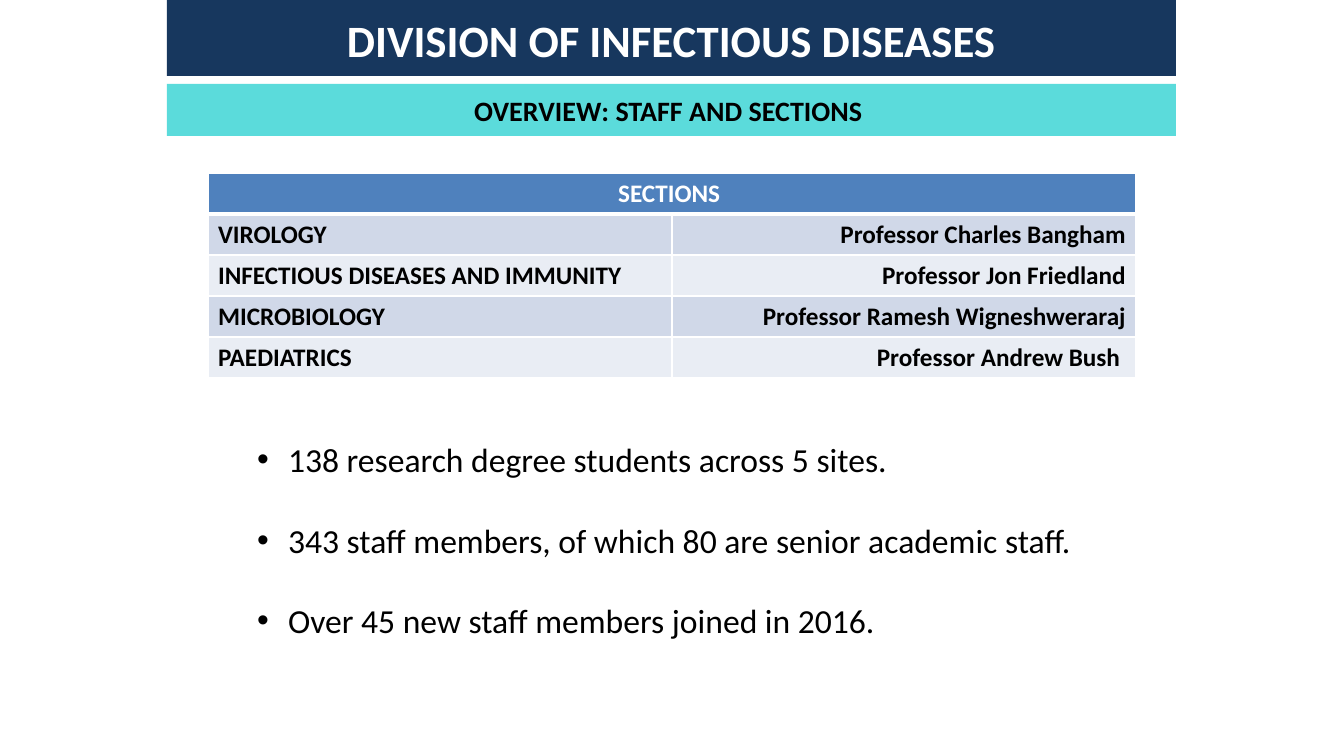
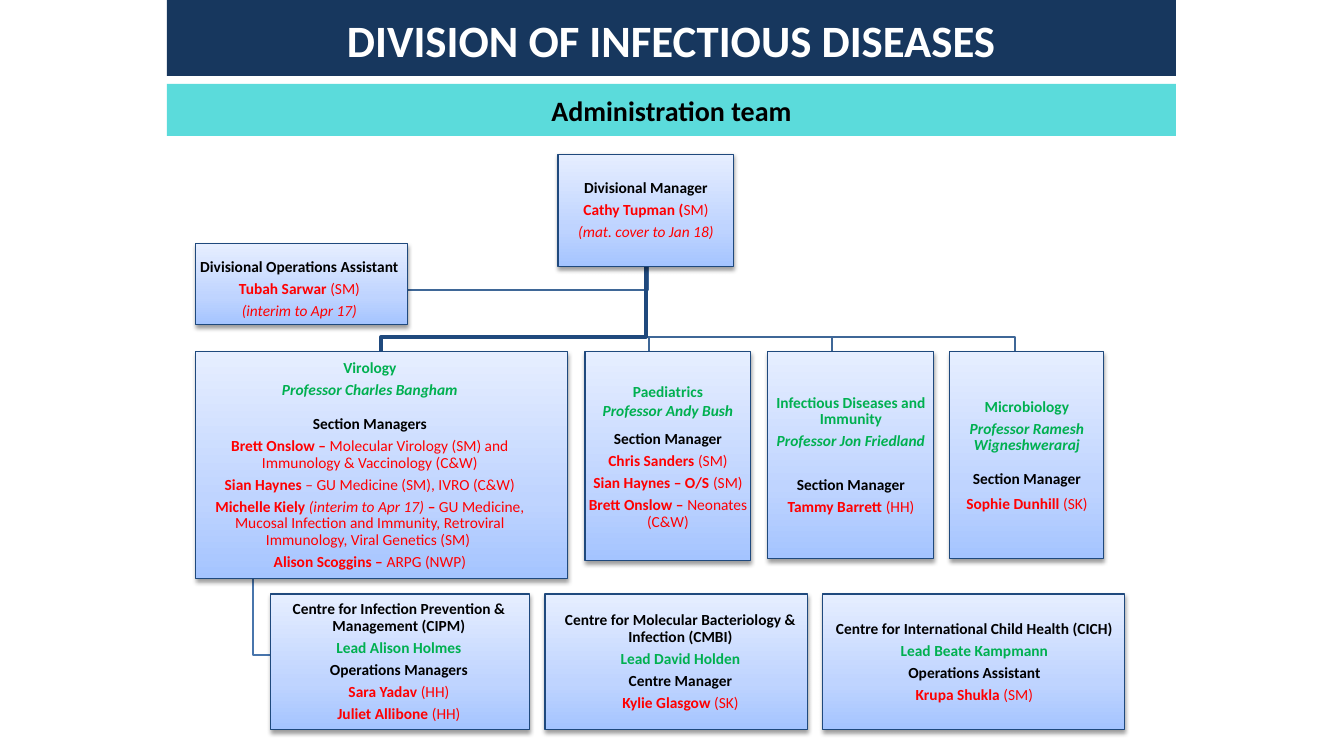
import dataclasses
import itertools

import pptx
import pptx.dml.color
import pptx.enum.shapes
import pptx.enum.text
import pptx.oxml
import pptx.oxml.ns
import pptx.util

EMU_PER_PX = 914400 / 100.8
DECK_SIZE = (1344, 756)
ALIGN = pptx.enum.text.PP_ALIGN
ANCHOR = pptx.enum.text.MSO_ANCHOR
RECTANGLE = pptx.enum.shapes.MSO_SHAPE.RECTANGLE
NAMESPACE = pptx.oxml.ns.nsdecls("a")


@dataclasses.dataclass(frozen=True)
class Theme:
    font: str = "Calibri"
    white: str = "FFFFFF"
    black: str = "000000"
    red: str = "FF0000"
    green: str = "00B050"
    navy: str = "17375E"
    aqua: str = "5BDBDB"
    table_head: str = "4F81BD"
    table_rows: tuple = ("D0D8E8", "E9EDF4")
    outline: str = "1F497D"
    branch: str = "3F6797"
    sub_branch: str = "4875AC"
    card_stops: tuple = ((0, "A4C4FF"), (35, "BFD4FF"), (100, "E6EEFF"))
    title_size: int = 32
    subtitle_size: int = 20
    table_size: int = 18
    list_size: int = 24
    card_size: int = 11


THEME = Theme()


@dataclasses.dataclass(frozen=True)
class Ink:
    color: str
    bold: bool = True
    italic: bool = False


ROLE = Ink(THEME.black)
LEAD = Ink(THEME.green)
PROFESSOR = Ink(THEME.green, italic=True)
PERSON = Ink(THEME.red)
DETAIL = Ink(THEME.red, bold=False)
COVER = Ink(THEME.red, bold=False, italic=True)


@dataclasses.dataclass(frozen=True)
class Line:
    """One paragraph of a card: (text, ink) runs and its spacing in points."""
    runs: tuple
    before: float = 0
    after: float = 3.85
    spacing: float = 0.9


@dataclasses.dataclass(frozen=True)
class Card:
    box: tuple
    lines: tuple
    inset: tuple = (1, 1, 1, 1)


def line(text, ink, **spacing):
    return Line(((text, ink),), **spacing)


def person(name, detail, **spacing):
    return Line(((name, PERSON), (detail, DETAIL)), **spacing)


SECTIONS = (
    ("VIROLOGY", "Professor Charles Bangham"),
    ("INFECTIOUS DISEASES AND IMMUNITY", "Professor Jon Friedland"),
    ("MICROBIOLOGY", "Professor Ramesh Wigneshweraraj"),
    ("PAEDIATRICS", "Professor Andrew Bush "),
)
FACTS = (
    "138 research degree students across 5 sites.",
    "343 staff members, of which 80 are senior academic staff.",
    "Over 45 new staff members joined in 2016.",
)

SECTION_TOP, CENTRE_TOP, CENTRE_HEIGHT = 198, 440, 136
CARDS = (
    Card((362, 0, 176, 113), (
        line("Divisional Manager", ROLE),
        person("Cathy Tupman (", "SM)"),
        line("(mat. cover to Jan 18)", COVER))),
    Card((0, 90, 212, 81), (
        line("Divisional Operations Assistant", ROLE),
        person("Tubah Sarwar ", "(SM)"),
        line("(interim to Apr 17)", COVER)), (1, 11, 6, 1)),
    Card((0, SECTION_TOP, 372, 227), (
        line("Virology", LEAD),
        line("Professor Charles Bangham", PROFESSOR),
        line("Section Managers", ROLE, before=8.6),
        person("Brett Onslow – ",
               "Molecular Virology (SM) and Immunology & Vaccinology (C&W)"),
        person("Sian Haynes ", "– GU Medicine (SM), IVRO (C&W)"),
        Line((("Michelle Kiely ", PERSON),
              ("(interim to Apr 17) ", COVER),
              ("– ", PERSON),
              ("GU Medicine, Mucosal Infection and Immunity, Retroviral "
               "Immunology, Viral Genetics (SM) ", DETAIL))),
        person("Alison Scoggins – ", "ARPG (NWP)")), (1, 1, 25, 1)),
    Card((389, SECTION_TOP, 166, 209), (
        line("Paediatrics", LEAD, after=0, spacing=1.0),
        line("Professor Andy Bush", PROFESSOR, after=0, spacing=1.0),
        line("Section Manager", ROLE, before=8.6),
        person("Chris Sanders ", "(SM)"),
        person("Sian Haynes – O/S ", "(SM)"),
        person("Brett Onslow – ", "Neonates (C&W)"))),
    Card((572, SECTION_TOP, 166, 207), (
        line("Infectious Diseases and Immunity", LEAD),
        line("Professor Jon Friedland", PROFESSOR),
        line("Section Manager", ROLE, before=15.7),
        person("Tammy Barrett ", "(HH)"))),
    Card((754, SECTION_TOP, 154, 207), (
        line("Microbiology", LEAD),
        line("Professor Ramesh Wigneshweraraj", PROFESSOR),
        line("Section Manager", ROLE, before=8.6),
        person("Sophie Dunhill ", "(SK)", after=0, spacing=1.0))),
    Card((75, CENTRE_TOP, 259, CENTRE_HEIGHT), (
        line("Centre for Infection Prevention & Management (CIPM)", ROLE),
        line("Lead Alison Holmes", LEAD),
        line("Operations Managers", ROLE),
        person("Sara Yadav ", "(HH)"),
        person("Juliet Allibone ", "(HH)")), (0, 1, 3, 1)),
    Card((349, CENTRE_TOP, 263, CENTRE_HEIGHT), (
        line("Centre for Molecular Bacteriology & Infection (CMBI)", ROLE),
        line("Lead David Holden", LEAD),
        line("Centre Manager", ROLE),
        person("Kylie Glasgow ", "(SK)")), (9, 1, 1, 1)),
    Card((627, CENTRE_TOP, 302, CENTRE_HEIGHT), (
        line("Centre for International Child Health (CICH)", ROLE),
        line("Lead Beate Kampmann", LEAD),
        line("Operations Assistant", ROLE),
        person("Krupa Shukla ", "(SM)")), (2, 1, 1, 1)),
)
TRUNK_X, TRUNK_TOP, BUS = 450, 94, 183


def branch(x):
    """Points from the manager down the trunk and along to a section."""
    return ((TRUNK_X, TRUNK_TOP), (TRUNK_X, BUS), (x, BUS), (x, SECTION_TOP))


ROUTES = (
    (((452, 108), (452, 136), (156, 136)), THEME.branch, 2),
    (branch(819), THEME.branch, 2),
    (branch(636), THEME.branch, 2),
    (branch(453), THEME.branch, 2),
    (((57, 409), (57, 501), (75, 501)), THEME.sub_branch, 2),
    (branch(185), THEME.outline, 2.25),
)


def px(*lengths):
    return [pptx.util.Emu(round(length * EMU_PER_PX)) for length in lengths]


def rgb(color):
    return pptx.dml.color.RGBColor.from_string(color)


def place(shape, box):
    shape.left, shape.top, shape.width, shape.height = px(*box)


def add_span(para, text, size, ink):
    span = para.add_run()
    span.text = text
    span.font.name = THEME.font
    span.font.size = pptx.util.Pt(size)
    span.font.bold = ink.bold
    span.font.italic = ink.italic
    span.font.color.rgb = rgb(ink.color)


def space(para, before, after, spacing):
    para.space_before = pptx.util.Pt(before)
    para.space_after = pptx.util.Pt(after)
    para.line_spacing = spacing


def fill_band(shape, text, fill, size, color):
    shape.fill.solid()
    shape.fill.fore_color.rgb = rgb(fill)
    frame = shape.text_frame
    frame.word_wrap = True
    frame.auto_size = pptx.enum.text.MSO_AUTO_SIZE.NONE
    frame.vertical_anchor = ANCHOR.TOP
    para = frame.paragraphs[0]
    para.alignment = ALIGN.CENTER
    space(para, 0, 10, 1.15)
    add_span(para, text, size, Ink(color))


def add_heading(page, box, subtitle):
    """Title band with the subtitle band below it."""
    left, top, width, _ = box
    title = page.shapes.title
    place(title, (left, top, width, 76))
    fill_band(title, "DIVISION OF INFECTIOUS DISEASES", THEME.navy,
              THEME.title_size, THEME.white)
    band = page.shapes.add_shape(RECTANGLE, *px(left, top + 84, width, 52))
    band.shadow.inherit = False
    band.line.fill.background()
    fill_band(band, subtitle, THEME.aqua, THEME.subtitle_size, THEME.black)


def set_cell(cell, text, fill, ink, align, borders):
    properties = cell._tc.get_or_add_tcPr()
    for side, width in borders:
        properties.append(pptx.oxml.parse_xml(
            f'<a:ln{side} {NAMESPACE} w="{width * 12700}"><a:solidFill>'
            f'<a:srgbClr val="{THEME.white}"/></a:solidFill></a:ln{side}>'))
    cell.fill.solid()
    cell.fill.fore_color.rgb = rgb(fill)
    cell.vertical_anchor = ANCHOR.MIDDLE
    para = cell.text_frame.paragraphs[0]
    para.alignment = align
    if text:
        add_span(para, text, THEME.table_size, ink)


def add_sections_table(page, box):
    table = page.shapes.add_table(len(SECTIONS) + 1, 2, *px(*box)).table
    for column, text in enumerate(("SECTIONS ", "")):
        set_cell(table.cell(0, column), text, THEME.table_head,
                 Ink(THEME.white), ALIGN.CENTER, (("T", 1), ("B", 3)))
    table.cell(0, 0).merge(table.cell(0, 1))
    columns = (("R", ALIGN.LEFT), ("L", ALIGN.RIGHT))
    fills = itertools.cycle(THEME.table_rows)
    for row, (texts, fill) in enumerate(zip(SECTIONS, fills), 1):
        for column, (inner_side, align) in enumerate(columns):
            borders = ((inner_side, 1), ("T", 3 if row == 1 else 1), ("B", 1))
            set_cell(table.cell(row, column), texts[column], fill, ROLE,
                     align, borders)


def add_facts(page, box):
    body = page.placeholders[1]
    place(body, box)
    frame = body.text_frame
    frame.auto_size = pptx.enum.text.MSO_AUTO_SIZE.NONE
    indent, = px(31)
    for index, fact in enumerate(FACTS):
        para = frame.add_paragraph() if index else frame.paragraphs[0]
        space(para, 28.6 if index else 0, 0, 1.0)
        properties = para._p.get_or_add_pPr()
        properties.set("marL", str(indent))
        properties.set("indent", str(-indent))
        add_span(para, fact, THEME.list_size, Ink(THEME.black, bold=False))


def add_route(page, origin, points, color, width):
    """Open right-angled outline through points."""
    start, *corners = [px(origin[0] + x, origin[1] + y) for x, y in points]
    builder = page.shapes.build_freeform(*start)
    builder.add_line_segments(corners, close=False)
    route = builder.convert_to_shape()
    route.shadow.inherit = False
    route.fill.background()
    route.line.color.rgb = rgb(color)
    route.line.width = pptx.util.Pt(width)


def style_card(shape):
    """Outline, upward gradient and soft shadow."""
    shape.line.color.rgb = rgb(THEME.outline)
    shape.line.width = pptx.util.Pt(0.75)
    stops = "".join(f'<a:gs pos="{position * 1000}"><a:srgbClr val="{color}"/></a:gs>'
                    for position, color in THEME.card_stops)
    properties = shape._element.spPr
    properties.find(pptx.oxml.ns.qn("a:prstGeom")).addnext(pptx.oxml.parse_xml(
        f'<a:gradFill {NAMESPACE} rotWithShape="1"><a:gsLst>{stops}</a:gsLst>'
        '<a:lin ang="16200000" scaled="0"/></a:gradFill>'))
    properties.append(pptx.oxml.parse_xml(
        f'<a:effectLst {NAMESPACE}><a:outerShdw blurRad="40000" dist="20000" '
        f'dir="5400000" rotWithShape="0"><a:srgbClr val="{THEME.black}">'
        '<a:alpha val="38000"/></a:srgbClr></a:outerShdw></a:effectLst>'))


def add_card(page, origin, card):
    x, y, width, height = card.box
    shape = page.shapes.add_shape(
        RECTANGLE, *px(origin[0] + x, origin[1] + y, width, height))
    style_card(shape)
    frame = shape.text_frame
    frame.word_wrap = True
    frame.vertical_anchor = ANCHOR.MIDDLE
    (frame.margin_left, frame.margin_top,
     frame.margin_right, frame.margin_bottom) = px(*card.inset)
    for index, entry in enumerate(card.lines):
        para = frame.add_paragraph() if index else frame.paragraphs[0]
        para.alignment = ALIGN.CENTER
        space(para, entry.before, entry.after, entry.spacing)
        for text, ink in entry.runs:
            add_span(para, text, THEME.card_size, ink)


def add_team_chart(page, origin):
    for route in ROUTES:
        add_route(page, origin, *route)
    for card in CARDS:
        add_card(page, origin, card)


def main():
    deck = pptx.Presentation()
    deck.slide_width, deck.slide_height = px(*DECK_SIZE)
    heading_box = (167, 0, 1009, 136)
    overview = deck.slides.add_slide(deck.slide_layouts[1])
    add_heading(overview, heading_box, "OVERVIEW: STAFF AND SECTIONS ")
    add_sections_table(overview, (208, 173, 928, 205))
    add_facts(overview, (247, 434, 850, 214))
    team = deck.slides.add_slide(deck.slide_layouts[5])
    add_heading(team, heading_box, "Administration team")
    add_team_chart(team, (196, 154))
    deck.save("out.pptx")


if __name__ == "__main__":
    main()
